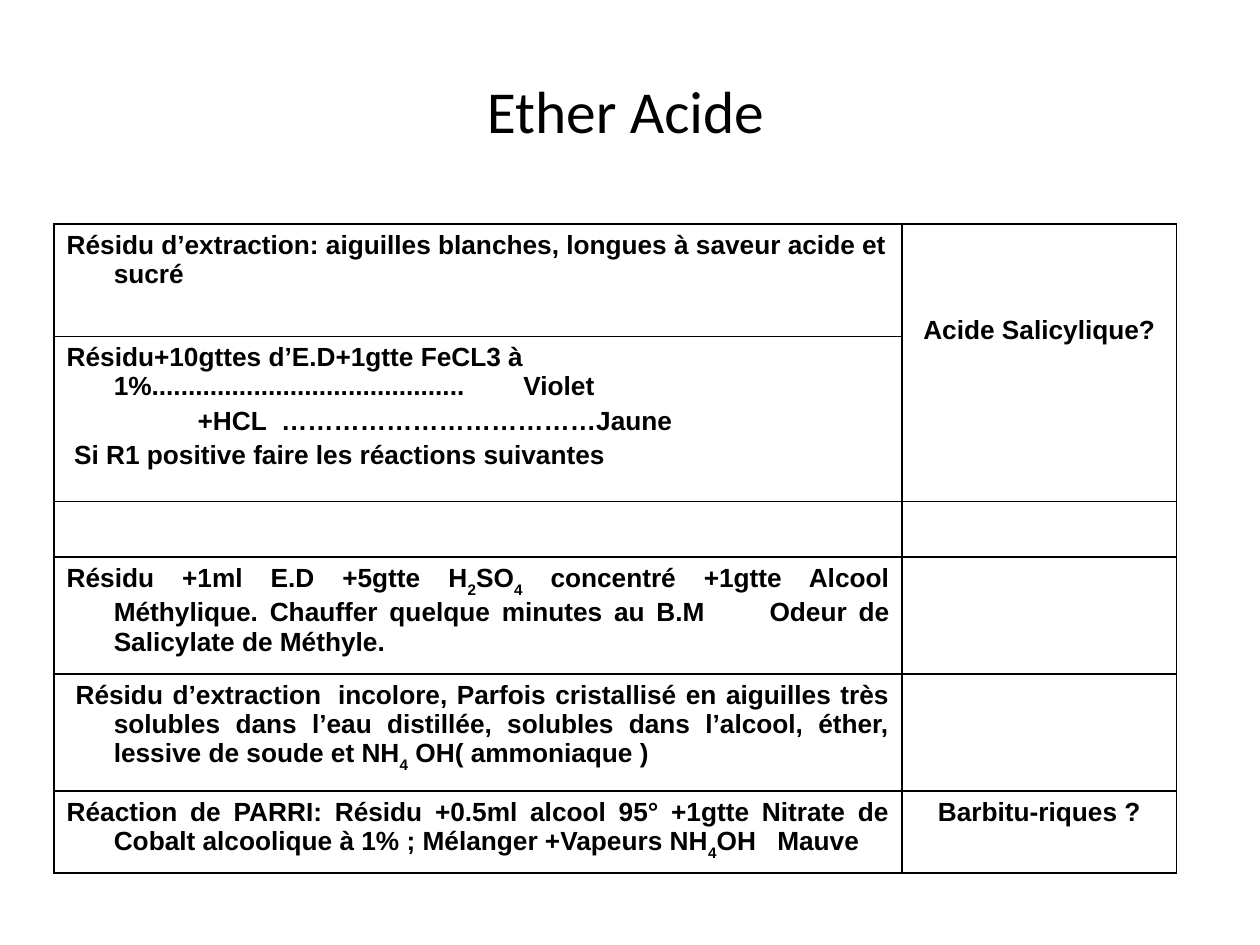
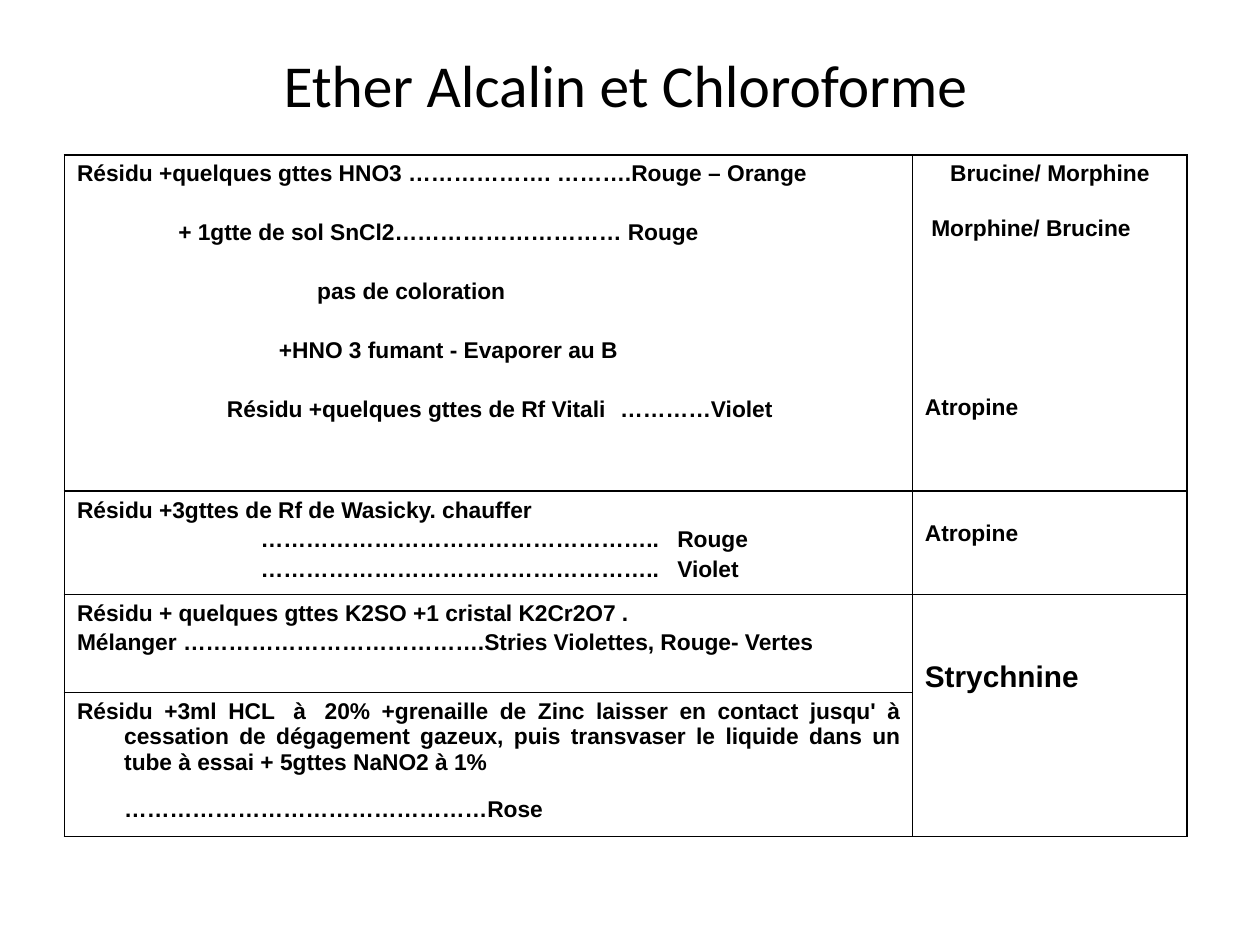
import itertools
from dataclasses import dataclass

import pptx
import pptx.dml.color
import pptx.enum.text
import pptx.oxml.ns
import pptx.util
from lxml import etree
from pptx.util import Cm, Pt

ALIGN = pptx.enum.text.PP_ALIGN
ANCHOR = pptx.enum.text.MSO_ANCHOR


@dataclass(frozen=True)
class Theme:
    ink: str = "000000"
    paper: str = "FFFFFF"
    title_font: str = "Calibri"
    body_font: str = "Arial"
    title_size: float = 34
    large_size: float = 17
    acid_size: float = 15
    alkaline_size: float = 13
    border: float = 1
    hanging: float = 0.95
    cell_margin: float = 0.13


@dataclass(frozen=True)
class Sub:
    """Subscript text."""
    text: str


@dataclass(frozen=True)
class Gap:
    """One space widened by a number of points."""
    points: float


@dataclass(frozen=True)
class Line:
    """One paragraph; indent and first are in centimetres, before in points."""
    pieces: tuple
    align: object = ALIGN.LEFT
    indent: float = 0
    first: float = 0
    before: float = 0
    size: float = 0


@dataclass(frozen=True)
class Entry:
    """One table cell; top is the upper margin in centimetres."""
    lines: tuple = ()
    top: float = Theme.cell_margin
    row_span: int = 1


def line(*pieces, **style):
    return Line(pieces, **style)


def hanging(*pieces, lead=0, **style):
    """Paragraph whose first line starts at lead and the others further in."""
    return line(*pieces, indent=Theme.hanging, first=lead - Theme.hanging, **style)


def justified(*pieces, **style):
    return hanging(*pieces, align=ALIGN.JUSTIFY, **style)


def centred(*pieces):
    return line(*pieces, align=ALIGN.CENTER)


class Deck:
    def __init__(self, theme):
        self.theme = theme
        self.presentation = pptx.Presentation()
        self.presentation.slide_width = Cm(25.4)
        self.presentation.slide_height = Cm(19.05)
        self.slide = None

    def color(self, value):
        return pptx.dml.color.RGBColor.from_string(value)

    def add_slide(self):
        self.slide = self.presentation.slides.add_slide(self.presentation.slide_layouts[6])

    def format_font(self, font, name, size, bold):
        font.name, font.size, font.bold = name, Pt(size), bold
        font.color.rgb = self.color(self.theme.ink)

    def add_title(self, text, top):
        box = self.slide.shapes.add_textbox(Cm(1.5), Cm(top), Cm(22.22), Cm(3.38))
        frame = box.text_frame
        frame.word_wrap = True
        frame.vertical_anchor = ANCHOR.MIDDLE
        frame.text = text
        paragraph = frame.paragraphs[0]
        paragraph.alignment = ALIGN.CENTER
        self.format_font(paragraph.runs[0].font, self.theme.title_font, self.theme.title_size, False)

    def add_table(self, left, top, columns, heights, entries, size):
        """Entries maps (row, column) to an Entry; other cells stay empty."""
        table = self.slide.shapes.add_table(
            len(heights), len(columns), Cm(left), Cm(top),
            Cm(sum(columns)), Cm(sum(heights))).table
        table.first_row = table.horz_banding = False
        for column, width in zip(table.columns, columns):
            column.width = Cm(width)
        for row, height in zip(table.rows, heights):
            row.height = Cm(height)
        for row, column in itertools.product(range(len(heights)), range(len(columns))):
            self.style_cell(table.cell(row, column))
        for (row, column), entry in entries.items():
            cell = table.cell(row, column)
            if entry.row_span > 1:
                cell.merge(table.cell(row + entry.row_span - 1, column))
            cell.margin_top = Cm(entry.top)
            for index, content in enumerate(entry.lines):
                frame = cell.text_frame
                paragraph = frame.add_paragraph() if index else frame.paragraphs[0]
                self.write_line(paragraph, content, content.size or size)

    def style_cell(self, cell):
        qn = pptx.oxml.ns.qn
        properties = cell._tc.get_or_add_tcPr()
        for side in ("lnL", "lnR", "lnT", "lnB"):
            border = etree.SubElement(properties, qn(f"a:{side}"), w=str(Pt(self.theme.border)))
            fill = etree.SubElement(border, qn("a:solidFill"))
            etree.SubElement(fill, qn("a:srgbClr"), val=self.theme.ink)
        cell.fill.solid()
        cell.fill.fore_color.rgb = self.color(self.theme.paper)

    def write_line(self, paragraph, content, size):
        properties = paragraph._p.get_or_add_pPr()
        properties.set("marL", str(Cm(content.indent)))
        properties.set("indent", str(Cm(content.first)))
        paragraph.alignment = content.align
        paragraph.space_before = Pt(content.before)
        for piece in content.pieces:
            if piece == "\v":
                paragraph.add_line_break()
                continue
            run = paragraph.add_run()
            run.text = " " if isinstance(piece, Gap) else getattr(piece, "text", piece)
            self.format_font(run.font, self.theme.body_font, size, True)
            if isinstance(piece, Sub):
                run.font._element.set("baseline", "-30000")
            elif isinstance(piece, Gap):
                run.font._element.set("spc", str(int(piece.points * 100)))


COLUMNS = (17.09, 5.54)

ACID_TESTS = {
    (0, 0): Entry((hanging(
        "Résidu d’extraction: aiguilles blanches, longues à saveur acide et sucré"),)),
    (0, 1): Entry((centred("Acide Salicylique?"),), top=1.85, row_span=2),
    (1, 0): Entry((
        hanging("Résidu+10gttes d’E.D+1gtte FeCL3 à", "\v",
                "1%...........................................", Gap(29), "Violet"),
        line("+HCL", Gap(4), "………………………………Jaune", indent=2.64, before=3),
        line("Si R1 positive faire les réactions suivantes", indent=0.15, before=3))),
    (3, 0): Entry((justified(
        "Résidu +1ml E.D +5gtte H", Sub("2"), "SO", Sub("4"),
        " concentré +1gtte Alcool Méthylique. Chauffer quelque minutes au B.M",
        Gap(30), "Odeur de Salicylate de Méthyle."),)),
    (4, 0): Entry((justified(
        "Résidu d’extraction", Gap(4), "incolore, Parfois cristallisé en aiguilles très "
        "solubles dans l’eau distillée, solubles dans l’alcool, éther, lessive de soude et NH",
        Sub("4"), " OH( ammoniaque )", lead=0.18),)),
    (5, 0): Entry((justified(
        "Réaction de PARRI: Résidu +0.5ml alcool 95° +1gtte Nitrate de Cobalt alcoolique "
        "à 1% ; Mélanger +Vapeurs NH", Sub("4"), "OH", Gap(8), "Mauve"),)),
    (5, 1): Entry((centred("Barbitu-riques ?"),)),
}

STEP = 19.2
COLOR_LEADER = "…………………………………………….."

ALKALINE_TESTS = {
    (0, 0): Entry((
        line("Résidu +quelques gttes HNO3 ………………. ……….Rouge – Orange"),
        line("+ 1gtte de sol SnCl2………………………… Rouge", indent=2.04, before=STEP),
        line("pas de coloration", indent=4.84, before=STEP),
        line("+HNO 3 fumant - Evaporer au B", indent=4.07, before=STEP),
        line("Résidu +quelques gttes de Rf Vitali", Gap(5), "…………Violet",
             indent=3.02, before=STEP))),
    (0, 1): Entry((
        centred("Brucine/ Morphine"),
        line("Morphine/ Brucine", indent=0.13, before=17),
        line("Atropine", before=87.3))),
    (1, 0): Entry((
        line("Résidu +3gttes de Rf de Wasicky. chauffer"),
        *(line(COLOR_LEADER, Gap(7), color, indent=3.7, before=2.4)
          for color in ("Rouge", "Violet")))),
    (1, 1): Entry((line("Atropine"),), top=0.61),
    (2, 0): Entry((
        line("Résidu + quelques gttes K2SO +1 cristal K2Cr2O7 ."),
        line("Mélanger ………………………………….Stries Violettes, Rouge- Vertes", before=2.4))),
    (2, 1): Entry((line("Strychnine", size=Theme.large_size),), top=1.33, row_span=2),
    (3, 0): Entry((
        justified("Résidu +3ml HCL", Gap(4), "à", Gap(4),
                  "20% +grenaille de Zinc laisser en contact jusqu' à cessation de dégagement "
                  "gazeux, puis transvaser le liquide dans un tube à essai + 5gttes NaNO2 à 1%"),
        line("…………………………………………Rose", indent=Theme.hanging, before=12.5))),
}


def main():
    theme = Theme()
    deck = Deck(theme)

    deck.add_slide()
    deck.add_title("Ether Acide", 0.53)
    deck.add_table(1.09, 4.52, COLUMNS, (2.26, 3.33, 1.12, 2.36, 2.36, 1.65),
                   ACID_TESTS, theme.acid_size)

    deck.add_slide()
    deck.add_title("Ether Alcalin et Chloroforme", 0)
    deck.add_table(1.3, 3.12, COLUMNS, (6.78, 2.08, 1.98, 2.87),
                   ALKALINE_TESTS, theme.alkaline_size)

    deck.presentation.save("out.pptx")


if __name__ == "__main__":
    main()
